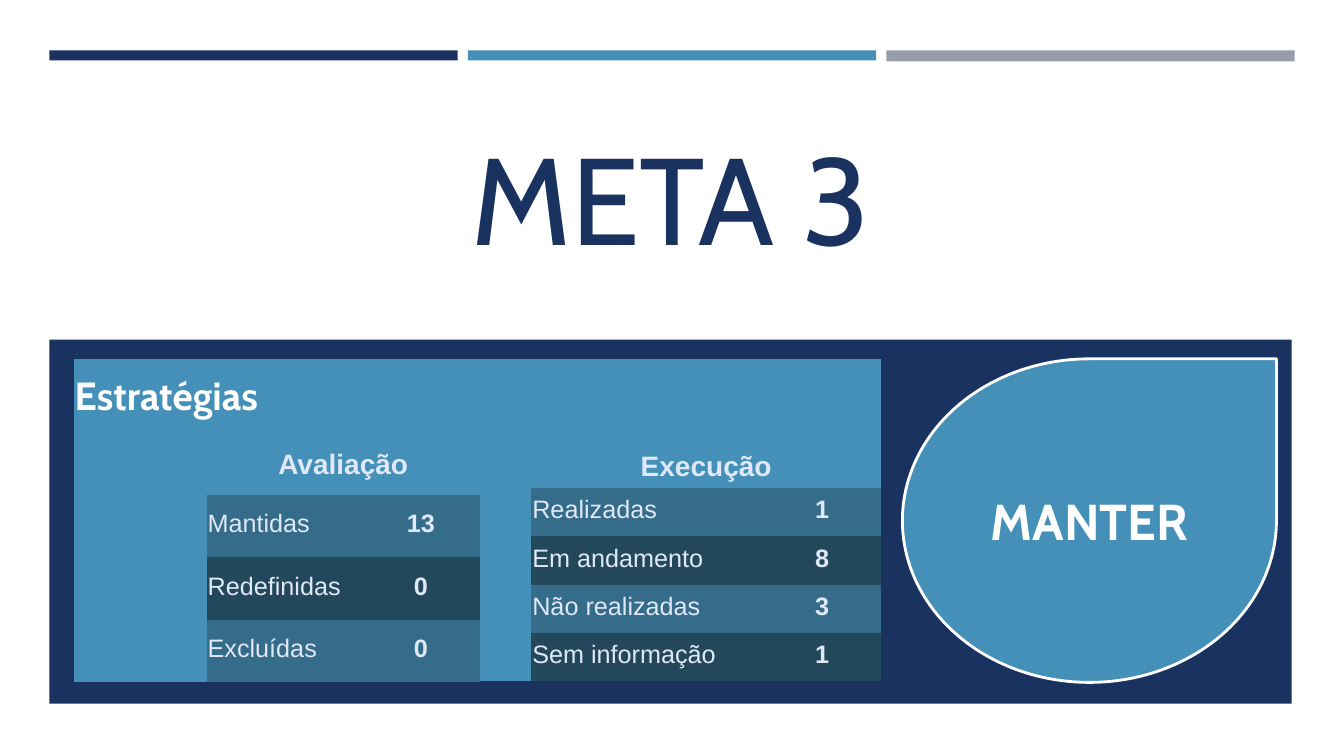
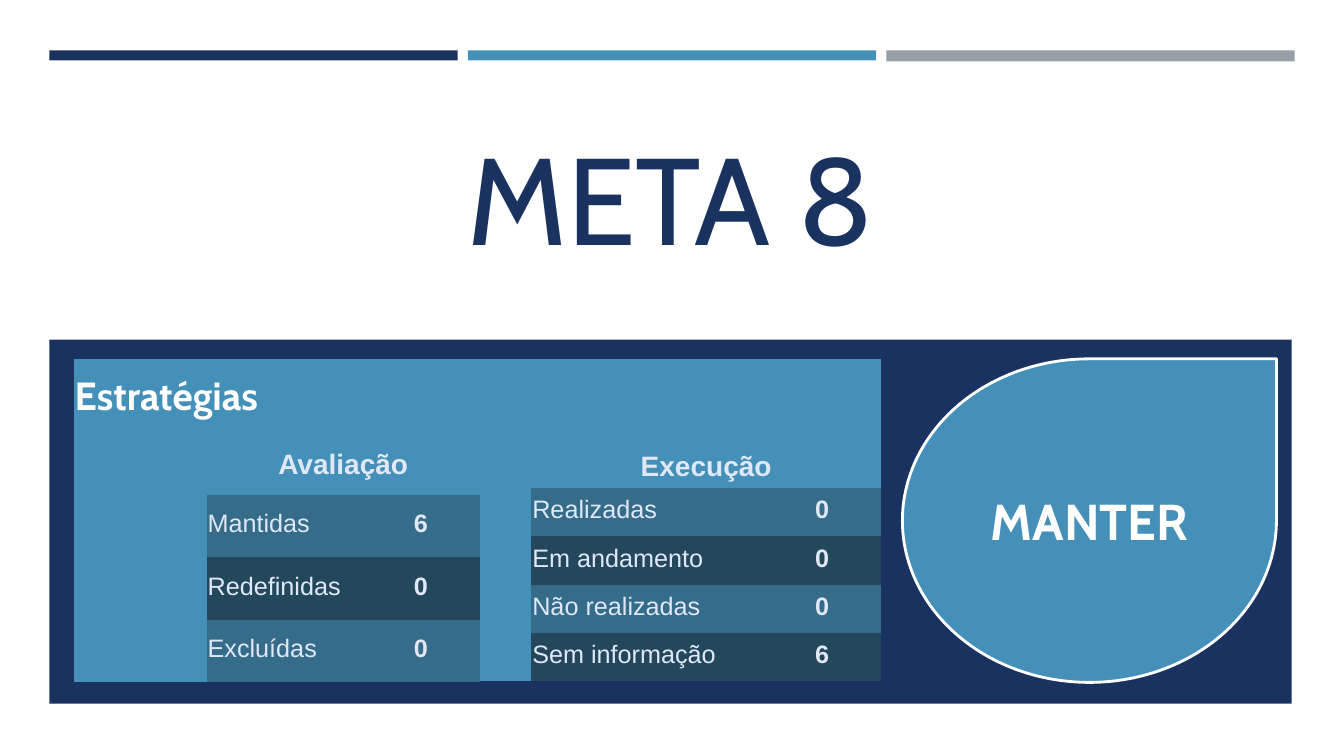
from pptx import Presentation
from pptx.dml.color import RGBColor
from pptx.enum.shapes import MSO_SHAPE
from pptx.enum.text import MSO_ANCHOR, MSO_AUTO_SIZE, PP_ALIGN
from pptx.oxml.ns import qn
from pptx.util import Inches, Pt

LEFT, CENTER = PP_ALIGN.LEFT, PP_ALIGN.CENTER
MIDDLE, BOTTOM = MSO_ANCHOR.MIDDLE, MSO_ANCHOR.BOTTOM
RECTANGLE, TEARDROP = MSO_SHAPE.RECTANGLE, MSO_SHAPE.TEAR
NO_STYLE = "{2D5ABB26-0587-4C30-8999-92F81FD0307C}"

COLORS = {
    "navy": "1A3260",
    "blue": "4590B8",
    "gray": "969FA7",
    "white": "FFFFFF",
    "pale": "E0E8F7",
    "row": "346C8A",
    "row_dark": "23485C",
}

BANDS = [
    (0.49, 0.5, 4.05, 0.1, "navy"),
    (8.79, 0.5, 4.05, 0.11, "gray"),
    (4.64, 0.5, 4.05, 0.1, "blue"),
    (0.49, 3.37, 12.32, 3.61, "navy"),
]

TABLES = [
    {
        "name": "Avaliação",
        "left": 0.73,
        "columns": [0.44, 0.88, 1.54, 1.17],
        "rows": [0.79, 0.56, 0.62, 0.62, 0.62],
        "heading_span": 3,
        "heading": "Estratégias",
        "anchor": MIDDLE,
        "labels": ["Mantidas", "Redefinidas", "Excluídas"],
    },
    {
        "name": "Execução",
        "left": 4.76,
        "columns": [0.51, 2.3, 1.17],
        "rows": [0.84, 0.44, 0.48, 0.48, 0.48, 0.48],
        "heading_span": 2,
        "heading": "",
        "anchor": BOTTOM,
        "labels": ["Realizadas", "Em andamento", "Não realizadas", "Sem informação"],
    },
]

GOALS = [
    {"title": "META 3", "verdict": "MANTER", "Avaliação": [13, 0, 0], "Execução": [1, 8, 3, 1]},
    {"title": "META 8", "verdict": "MANTER", "Avaliação": [6, 0, 0], "Execução": [0, 0, 0, 6]},
]


def write(frame, text, size, font, color, bold=False, align=CENTER):
    frame.text = text
    para = frame.paragraphs[0]
    para.alignment = align
    for span in para.runs:
        span.font.size = Pt(size)
        span.font.name = font
        span.font.bold = bold
        span.font.color.rgb = RGBColor.from_string(COLORS[color])


def write_cell(cell, text, size, font="Arial", color="pale", bold=True, align=CENTER, anchor=MIDDLE):
    write(cell.text_frame, text, size, font, color, bold, align)
    cell.vertical_anchor = anchor
    cell.margin_left = cell.margin_right = cell.margin_top = Inches(0.01)
    cell.margin_bottom = Inches(0.05)


deck = Presentation()
deck.slide_width = Inches(13.33)
deck.slide_height = Inches(7.5)
layout = deck.slide_layouts[0]
title = layout.placeholders[0]
title.left, title.top = Inches(0.64), Inches(1.12)
title.width, title.height = Inches(12.02), Inches(1.61)

pages = [deck.slides.add_slide(layout) for goal in GOALS]

for position, (left, top, width, height, color) in enumerate(BANDS):
    band = pages[0].shapes.add_shape(
        RECTANGLE, Inches(left), Inches(top), Inches(width), Inches(height))
    band.shadow.inherit = False
    band.fill.solid()
    band.fill.fore_color.rgb = RGBColor.from_string(COLORS[color])
    band.line.fill.background()
    layout.shapes.element.insert(2 + position, band.element)

for page, goal in zip(pages, GOALS):
    subtitle = page.placeholders[1].element
    subtitle.getparent().remove(subtitle)
    title = page.shapes.title
    write(title.text_frame, goal["title"], 88, "Cabin", "navy")
    title.text_frame.vertical_anchor = BOTTOM
    title.text_frame.auto_size = MSO_AUTO_SIZE.NONE

    for block in TABLES:
        columns, rows = block["columns"], block["rows"]
        frame = page.shapes.add_table(
            len(rows), len(columns), Inches(block["left"]), Inches(3.56),
            Inches(sum(columns)), Inches(sum(rows)))
        for style in frame.element.iter(qn("a:tableStyleId")):
            style.text = NO_STYLE
        table = frame.table
        table.first_row = table.horz_banding = False
        for column, width in zip(table.columns, columns):
            column.width = Inches(width)
        for row, height in zip(table.rows, rows):
            row.height = Inches(height)
        for cell in table.iter_cells():
            cell.fill.solid()
            cell.fill.fore_color.rgb = RGBColor.from_string(COLORS["blue"])

        value_column = len(columns) - 1
        label_column = value_column - 1
        heading = table.cell(0, 0)
        heading.merge(table.cell(0, block["heading_span"] - 1))
        if block["heading"]:
            write_cell(heading, block["heading"], 28, "Cabin", "white", align=LEFT)
        name = table.cell(1, label_column)
        name.merge(table.cell(1, value_column))
        write_cell(name, block["name"], 20, anchor=block["anchor"])

        for index, (label, value) in enumerate(zip(block["labels"], goal[block["name"]])):
            label_cell = table.cell(index + 2, label_column)
            value_cell = table.cell(index + 2, value_column)
            write_cell(label_cell, label, 18, bold=False, align=LEFT)
            write_cell(value_cell, str(value), 18)
            shade = COLORS["row_dark" if index % 2 else "row"]
            for cell in (label_cell, value_cell):
                cell.fill.fore_color.rgb = RGBColor.from_string(shade)

    verdict = page.shapes.add_shape(
        TEARDROP, Inches(8.95), Inches(3.56), Inches(3.71), Inches(3.21))
    verdict.shadow.inherit = False
    verdict.fill.solid()
    verdict.fill.fore_color.rgb = RGBColor.from_string(COLORS["blue"])
    verdict.line.color.rgb = RGBColor.from_string(COLORS["white"])
    verdict.line.width = Pt(2)
    verdict.text_frame.vertical_anchor = MIDDLE
    write(verdict.text_frame, goal["verdict"], 36, "Cabin", "white", bold=True)

deck.save("out.pptx")
